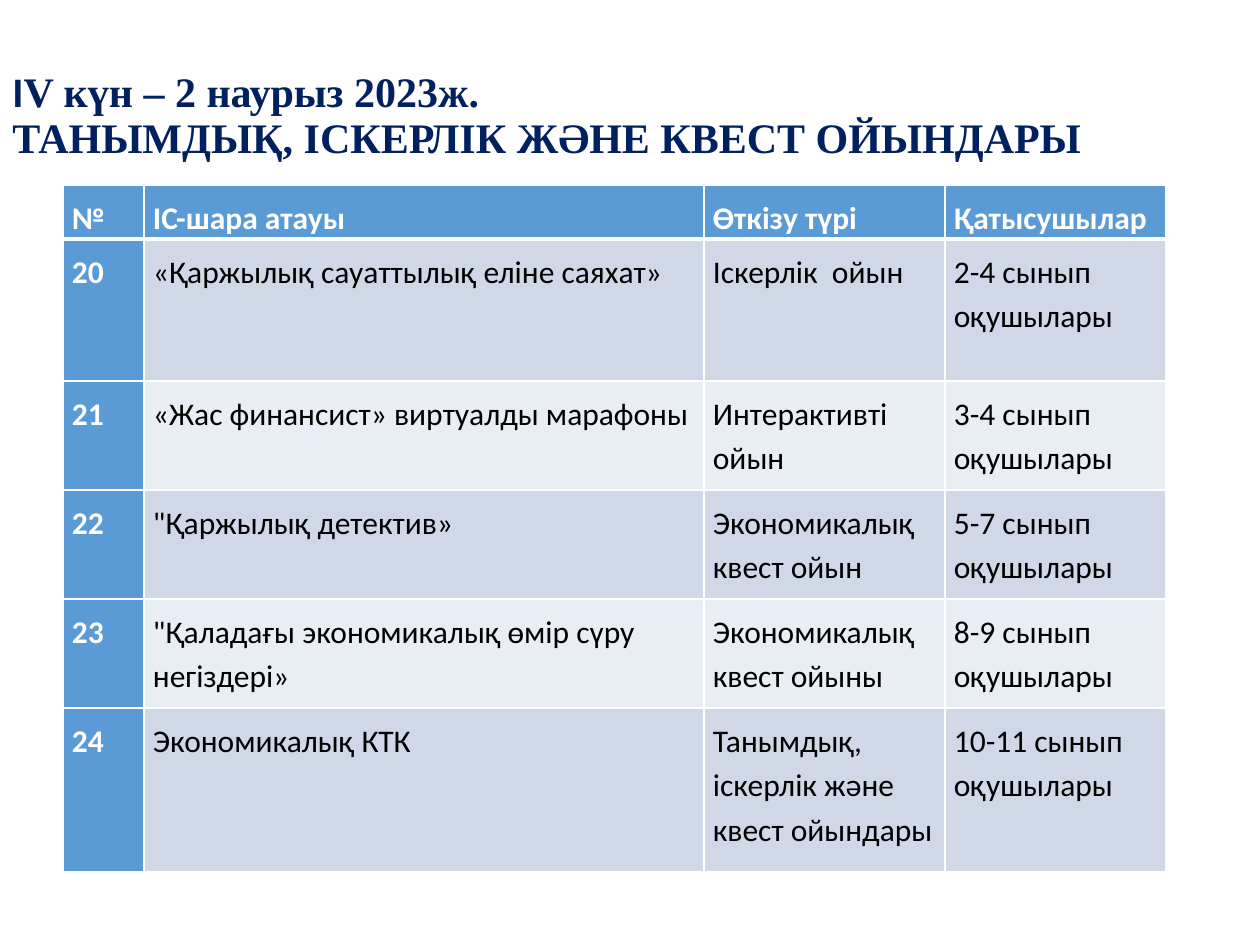
from dataclasses import dataclass

import pptx
import pptx.dml.color
import pptx.enum.text
import pptx.oxml
import pptx.oxml.ns
import pptx.util

PX = pptx.util.Inches(1) / 126  # one scale for all lengths


def px(n):
    return pptx.util.Emu(round(n * PX))


def rgb(value):
    return pptx.dml.color.RGBColor.from_string(value)


@dataclass(frozen=True)
class Theme:
    title: str = "002060"
    accent: str = "5B9BD5"
    bands: tuple = ("D0D8E8", "E9EDF4")
    light: str = "FFFFFF"
    dark: str = "000000"
    title_font: str = "Times New Roman"
    body_font: str = "Calibri"
    title_size: int = 24
    body_size: int = 18
    line: int = 1
    header_line: int = 3


class Deck:
    def __init__(self, prs, theme):
        self.theme = theme
        self.slide = prs.slides.add_slide(prs.slide_layouts[6])

    def style(self, r, font, size, color, bold):
        r.font.name = font
        r.font.size = pptx.util.Pt(size)
        r.font.color.rgb = rgb(color)
        r.font.bold = bold

    def title(self, x, y, w, h, lines):
        """Each line is a list of (text, font) runs."""
        t = self.theme
        tf = self.slide.shapes.add_textbox(px(x), px(y), px(w), px(h)).text_frame
        tf.word_wrap = True
        tf.vertical_anchor = pptx.enum.text.MSO_ANCHOR.MIDDLE
        for i, runs in enumerate(lines):
            p = tf.add_paragraph() if i else tf.paragraphs[0]
            p.line_spacing = 0.9
            for text, font in runs:
                r = p.add_run()
                r.text = text
                self.style(r, font, t.title_size, t.title, True)

    def borders(self, cell, top, bottom):
        t = self.theme
        tc_pr = cell._tc.get_or_add_tcPr()
        sides = (("L", t.line), ("R", t.line), ("T", top), ("B", bottom))
        for i, (side, width) in enumerate(sides):
            ln = pptx.oxml.parse_xml(
                f'<a:ln{side} {pptx.oxml.ns.nsdecls("a")} w="{pptx.util.Pt(width)}">'
                f'<a:solidFill><a:srgbClr val="{t.light}"/></a:solidFill></a:ln{side}>')
            tc_pr.insert(i, ln)

    def cell(self, cell, text, row, col):
        t = self.theme
        header = row == 0
        strong = header or col == 0
        cell.margin_left = cell.margin_top = px(9)
        cell.margin_right = cell.margin_bottom = 0
        cell.fill.solid()
        cell.fill.fore_color.rgb = rgb(t.accent if strong else t.bands[(row - 1) % 2])
        self.borders(cell, t.header_line if row == 1 else t.line,
                     t.header_line if header else t.line)
        cell.text_frame.text = text
        p = cell.text_frame.paragraphs[0]
        p.line_spacing = 1.15
        if header:
            p.alignment = pptx.enum.text.PP_ALIGN.JUSTIFY
        self.style(p.runs[0], t.body_font, t.body_size,
                   t.light if strong else t.dark, strong)

    def table(self, x, y, widths, heights, rows):
        table = self.slide.shapes.add_table(
            len(rows), len(widths), px(x), px(y),
            px(sum(widths)), px(sum(heights))).table
        table.first_col = True
        for column, w in zip(table.columns, widths):
            column.width = px(w)
        for i, (h, values) in enumerate(zip(heights, rows)):
            table.rows[i].height = px(h)
            for j, text in enumerate(values):
                self.cell(table.cell(i, j), text, i, j)


EVENTS = [
    ("№", "ІС-шара атауы", "Өткізу түрі", "Қатысушылар"),
    ("20", "«Қаржылық сауаттылық еліне саяхат»", "Іскерлік  ойын",
     "2-4 сынып оқушылары"),
    ("21", "«Жас финансист» виртуалды марафоны", "Интерактивті ойын",
     "3-4 сынып оқушылары"),
    ("22", "\"Қаржылық детектив»", "Экономикалық квест ойын",
     "5-7 сынып оқушылары"),
    ("23", "\"Қаладағы экономикалық өмір сүру негіздері»",
     "Экономикалық квест ойыны", "8-9 сынып оқушылары"),
    ("24", "Экономикалық КТК", "Танымдық, іскерлік және квест ойындары",
     "10-11 сынып оқушылары"),
]


def main():
    prs = pptx.Presentation()
    prs.slide_width, prs.slide_height = px(1260), px(945)
    theme = Theme()
    deck = Deck(prs, theme)

    # Day and theme of the day
    deck.title(0, 38, 1134, 158, [
        [("I", theme.body_font), ("V күн – 2 наурыз 2023ж.", theme.title_font)],
        [("ТАНЫМДЫҚ, ІСКЕРЛІК ЖӘНЕ КВЕСТ ОЙЫНДАРЫ", theme.title_font)],
    ])

    # Schedule of events
    deck.table(63, 185, [81, 560, 241, 221], [54, 142, 109, 109, 109, 164], EVENTS)

    prs.save("out.pptx")


if __name__ == "__main__":
    main()
